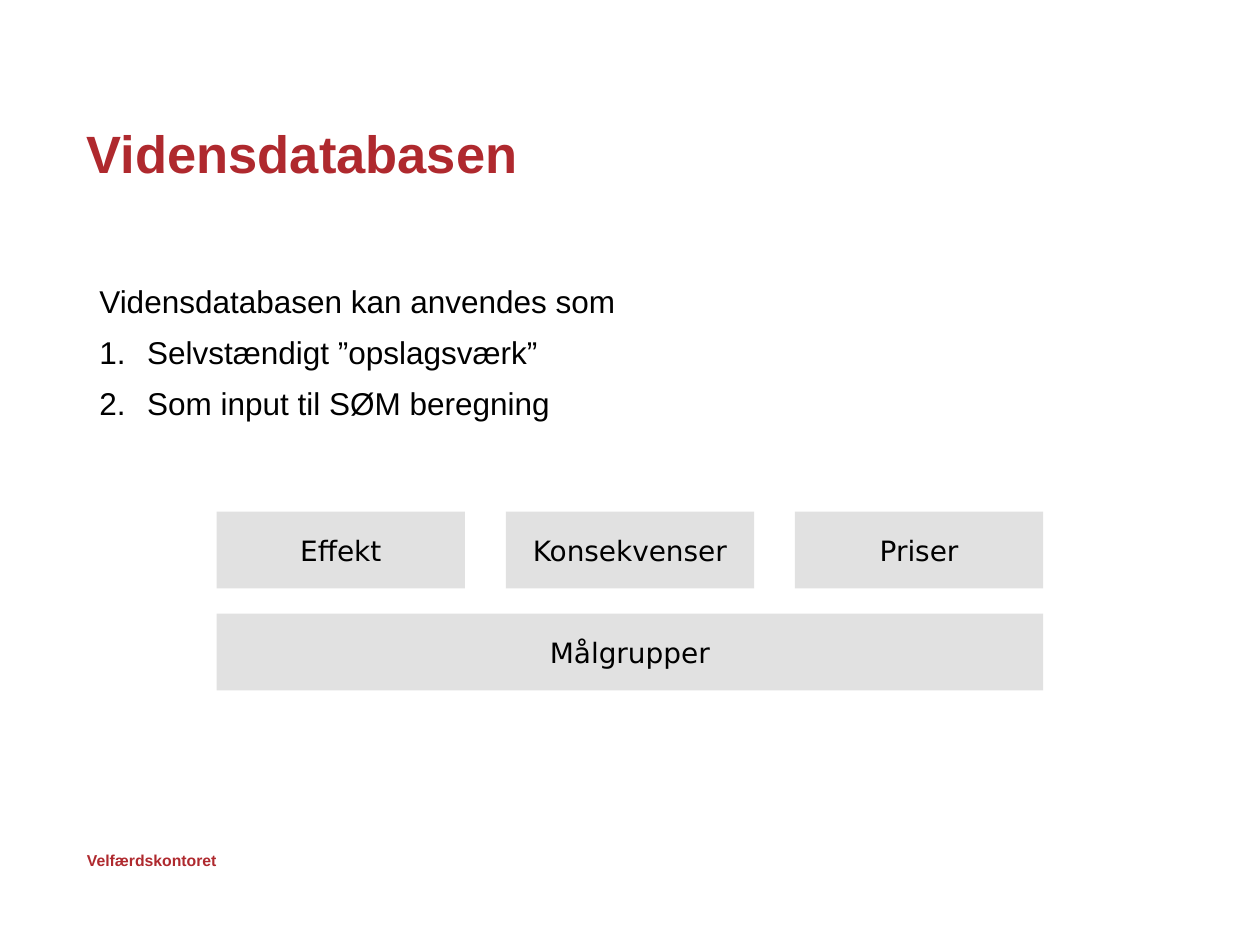
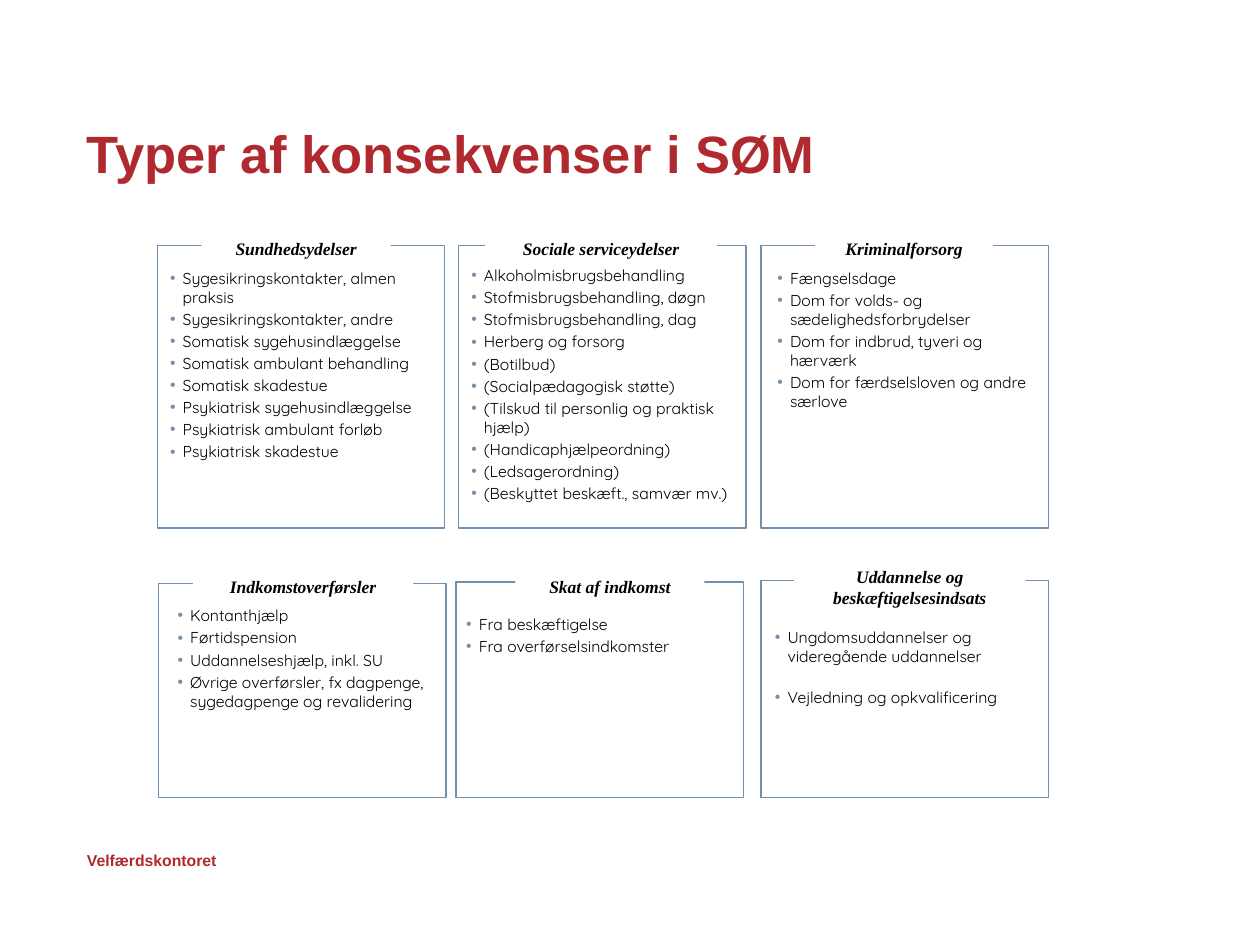
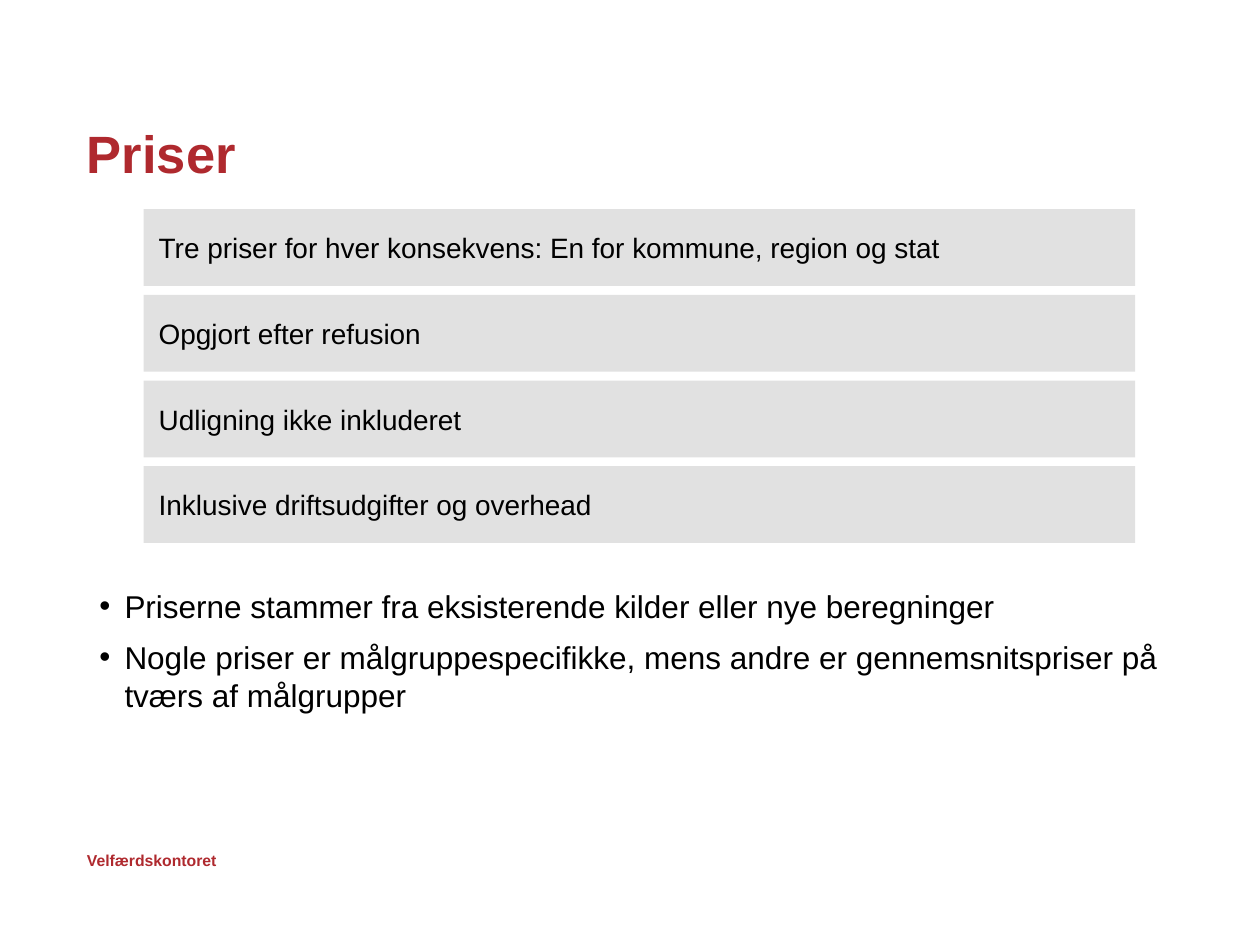
from lxml.etree import SubElement
from pptx import Presentation
from pptx.dml.color import RGBColor
from pptx.enum.shapes import MSO_SHAPE
from pptx.enum.text import MSO_ANCHOR, PP_ALIGN
from pptx.oxml.ns import qn
from pptx.util import Inches, Pt

RED = RGBColor(0xAF, 0x29, 0x2E)
BLUE = RGBColor(0x70, 0x90, 0xAD)
GREY = RGBColor(0xE1, 0xE1, 0xE1)
WHITE = RGBColor(0xFF, 0xFF, 0xFF)
BLACK = RGBColor(0x00, 0x00, 0x00)

TITLES = ["Vidensdatabasen", "Typer af konsekvenser i SØM", "Priser"]
BAR_HEIGHT = 0.61
BAR_INSETS = (0.12, 0.12)
HEADING_INSETS = (0.16, 0.04)


def add_panel(slide, bounds, fill=None, line=None, insets=(0, 0), anchor=MSO_ANCHOR.TOP):
    bounds = [Inches(length) for length in bounds]
    if fill is None and line is None:
        panel = slide.shapes.add_textbox(*bounds)
    else:
        panel = slide.shapes.add_shape(MSO_SHAPE.RECTANGLE, *bounds)
        panel.shadow.inherit = False
        if fill is None:
            panel.fill.background()
        else:
            panel.fill.solid()
            panel.fill.fore_color.rgb = fill
        if line is None:
            panel.line.fill.background()
        else:
            panel.line.color.rgb = line
            panel.line.width = Pt(0.75)
    frame = panel.text_frame
    frame.word_wrap = True
    frame.vertical_anchor = anchor
    frame.margin_left = frame.margin_right = Inches(insets[0])
    frame.margin_top = frame.margin_bottom = Inches(insets[1])
    return frame


def add_text(frame, text, size, font="Arial", color=BLACK, bold=False, italic=False,
             align=PP_ALIGN.LEFT, before=0, spacing=1.0, indent=0, numbered=False,
             bullet_color=BLACK):
    paragraph = frame.add_paragraph() if frame.text else frame.paragraphs[0]
    paragraph.alignment = align
    paragraph.space_before = Pt(before)
    paragraph.line_spacing = spacing
    run = paragraph.add_run()
    run.text = text
    run.font.name = font
    run.font.size = Pt(size)
    run.font.color.rgb = color
    run.font.bold = bold
    run.font.italic = italic
    if indent:
        properties = paragraph._p.get_or_add_pPr()
        properties.set("marL", str(Inches(indent)))
        properties.set("indent", str(-Inches(indent)))
        bullet_fill = SubElement(properties, qn("a:buClr"))
        SubElement(bullet_fill, qn("a:srgbClr"), val=str(bullet_color))
        SubElement(properties, qn("a:buFont"), typeface="Arial")
        if numbered:
            SubElement(properties, qn("a:buAutoNum"), type="arabicPeriod")
        else:
            SubElement(properties, qn("a:buChar"), char="•")


presentation = Presentation()
presentation.slide_width = Inches(10)
presentation.slide_height = Inches(7.5)

slides = []
for title in TITLES:
    slide = presentation.slides.add_slide(presentation.slide_layouts[6])
    footer = add_panel(slide, (0.69, 6.75, 1.18, 0.15))
    add_text(footer, "Velfærdskontoret", 9, color=RED, bold=True)
    heading = add_panel(slide, (0.69, 0.83, 8.64, 0.83), anchor=MSO_ANCHOR.MIDDLE)
    add_text(heading, title, 30, color=RED, bold=True, spacing=0.9)
    slides.append(slide)
database_slide, consequences_slide, prices_slide = slides

uses = add_panel(database_slide, (0.69, 2.19, 8.64, 1.3), insets=(0.1, 0.05))
add_text(uses, "Vidensdatabasen kan anvendes som", 18)
for use in ["Selvstændigt ”opslagsværk”", "Som input til SØM beregning"]:
    add_text(uses, use, 18, before=7.5, indent=0.38, numbered=True)

base_left, base_width, pillar_width = 1.72, 6.56, 1.97
pillar_names = ["Effekt", "Konsekvenser", "Priser"]
pillar_step = (base_width - pillar_width) / (len(pillar_names) - 1)
blocks = [(name, (base_left + i * pillar_step, 4.06, pillar_width, BAR_HEIGHT))
          for i, name in enumerate(pillar_names)]
blocks.append(("Målgrupper", (base_left, 4.87, base_width, BAR_HEIGHT)))
for name, bounds in blocks:
    block = add_panel(database_slide, bounds, GREY, insets=BAR_INSETS, anchor=MSO_ANCHOR.MIDDLE)
    add_text(block, name, 16, "DejaVu Sans", align=PP_ALIGN.CENTER)

consequences = [
    ("Sundhedsydelser", (1.25, 1.95, 2.28, 2.24), (1.6, 1.85, 1.5, 0.25), [
        ((1.35, 2.13, 1.99, 1.76), [
            "Sygesikringskontakter, almen praksis",
            "Sygesikringskontakter, andre",
            "Somatisk sygehusindlæggelse",
            "Somatisk ambulant behandling",
            "Somatisk skadestue",
            "Psykiatrisk sygehusindlæggelse",
            "Psykiatrisk ambulant forløb",
            "Psykiatrisk skadestue"])]),
    ("Sociale serviceydelser", (3.64, 1.95, 2.28, 2.24), (3.85, 1.85, 1.84, 0.25), [
        ((3.74, 2.11, 2.15, 1.94), [
            "Alkoholmisbrugsbehandling",
            "Stofmisbrugsbehandling, døgn",
            "Stofmisbrugsbehandling, dag",
            "Herberg og forsorg",
            "(Botilbud)",
            "(Socialpædagogisk støtte)",
            "(Tilskud til personlig og praktisk hjælp)",
            "(Handicaphjælpeordning)",
            "(Ledsagerordning)",
            "(Beskyttet beskæft., samvær mv.)"])]),
    ("Kriminalforsorg", (6.04, 1.95, 2.28, 2.24), (6.47, 1.85, 1.41, 0.25), [
        ((6.17, 2.13, 1.99, 1.33), [
            "Fængselsdage",
            "Dom for volds- og sædelighedsforbrydelser",
            "Dom for indbrud, tyveri og hærværk",
            "Dom for færdselsloven og andre særlove"])]),
    ("Indkomstoverførsler", (1.26, 4.63, 2.28, 1.7), (1.53, 4.53, 1.75, 0.25), [
        ((1.41, 4.81, 1.99, 1.36), [
            "Kontanthjælp",
            "Førtidspension",
            "Uddannelseshjælp, inkl. SU",
            "Øvrige overførsler, fx dagpenge, sygedagpenge og revalidering"])]),
    ("Skat af indkomst", (3.62, 4.62, 2.28, 1.71), (4.09, 4.53, 1.5, 0.25), [
        ((3.7, 4.88, 1.99, 0.53), [
            "Fra beskæftigelse",
            "Fra overførselsindkomster"])]),
    ("Uddannelse og beskæftigelsesindsats", (6.04, 4.61, 2.28, 1.72), (6.3, 4.45, 1.84, 0.42), [
        ((6.15, 4.98, 1.99, 0.4), ["Ungdomsuddannelser og videregående uddannelser"]),
        ((6.15, 5.46, 1.99, 0.4), ["Vejledning og opkvalificering"])]),
]
for name, frame_bounds, name_bounds, lists in consequences:
    add_panel(consequences_slide, frame_bounds, line=BLUE)
    label = add_panel(consequences_slide, name_bounds, WHITE, insets=HEADING_INSETS,
                      anchor=MSO_ANCHOR.MIDDLE)
    add_text(label, name, 10, "Times New Roman", bold=True, italic=True, align=PP_ALIGN.CENTER)
    for list_bounds, entries in lists:
        entry_list = add_panel(consequences_slide, list_bounds)
        for entry in entries:
            add_text(entry_list, entry, 9, "Quicksand", before=1.8, indent=0.1,
                     bullet_color=BLUE)

principles = [
    "Tre priser for hver konsekvens: En for kommune, region og stat",
    "Opgjort efter refusion",
    "Udligning ikke inkluderet",
    "Inklusive driftsudgifter og overhead",
]
for i, principle in enumerate(principles):
    bar = add_panel(prices_slide, (1.14, 1.66 + i * 0.68, 7.87, BAR_HEIGHT), GREY,
                    insets=BAR_INSETS, anchor=MSO_ANCHOR.MIDDLE)
    add_text(bar, principle, 16)

sources = add_panel(prices_slide, (0.69, 4.61, 8.64, 1.81), insets=(0.1, 0.05))
for source in [
    "Priserne stammer fra eksisterende kilder eller nye beregninger",
    "Nogle priser er målgruppespecifikke, mens andre er gennemsnitspriser på tværs af målgrupper",
]:
    add_text(sources, source, 18, before=7.5, indent=0.2)

presentation.save("out.pptx")
